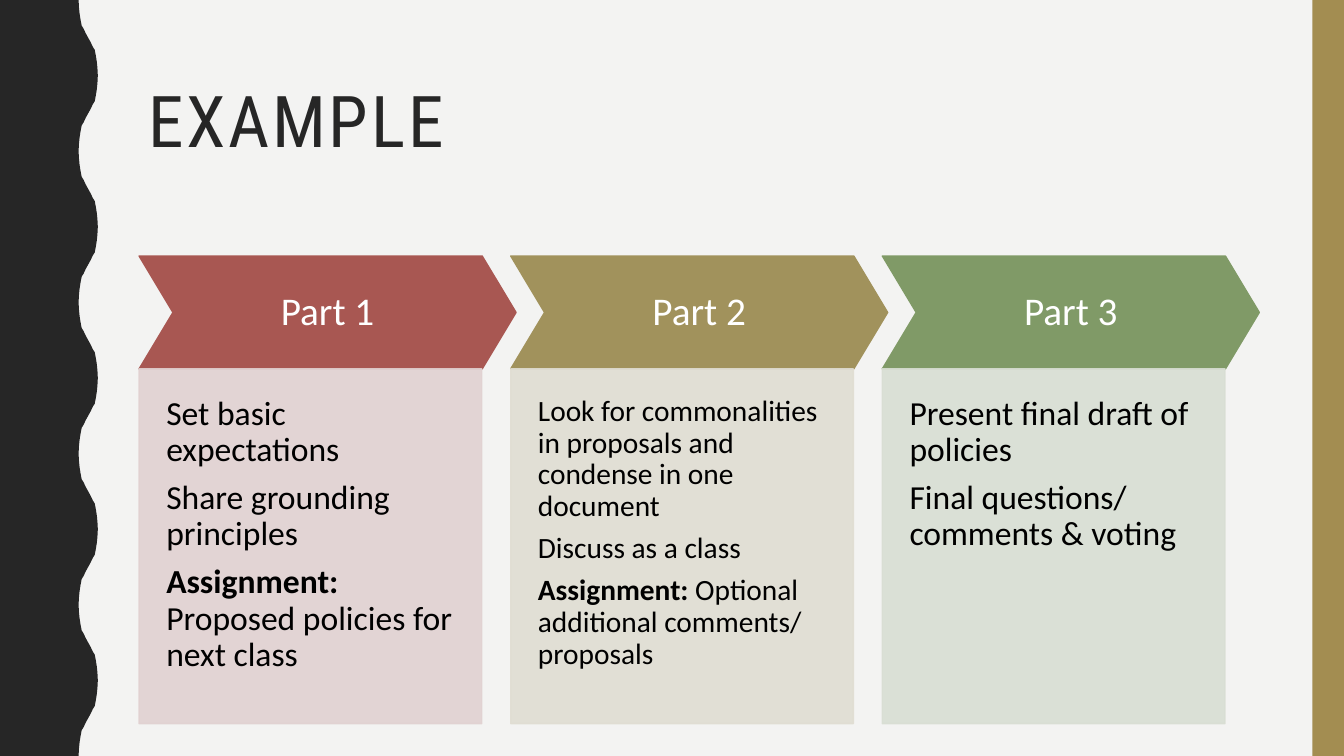
from dataclasses import dataclass

from lxml.etree import SubElement
from pptx import Presentation
from pptx.dml.color import RGBColor
from pptx.enum.shapes import MSO_SHAPE as Preset
from pptx.enum.text import MSO_ANCHOR as Anchor, PP_ALIGN as Align
from pptx.oxml.ns import qn
from pptx.shapes.autoshape import Shape
from pptx.slide import Slide
from pptx.text.text import TextFrame
from pptx.util import Inches, Pt

SLIDE_WIDTH = Inches(13.333)
SLIDE_HEIGHT = Inches(7.5)


@dataclass(frozen=True)
class Theme:
    background: str = "F3F3F2"
    ink: str = "262626"
    accent: str = "A38D51"
    heading_text: str = "FFFFFF"
    body_text: str = "000000"
    title_font: str = "Roboto Condensed"
    body_font: str = "Calibri"
    title_size: int = 51
    title_tracking: int = 2
    heading_size: int = 28
    line_spacing: float = 0.9
    space_after: float = 0.35
    card_opacity: int = 90


@dataclass(frozen=True)
class Area:
    """Shares of the slide in percent."""

    left: float
    top: float
    width: float
    height: float

    def shifted(self, amount: float) -> "Area":
        return Area(self.left + amount, self.top, self.width, self.height)

    def lengths(self) -> tuple[int, int, int, int]:
        return across(self.left), down(self.top), across(self.width), down(self.height)


@dataclass(frozen=True)
class Point:
    text: str
    lead: str = ""


@dataclass(frozen=True)
class Part:
    heading: str
    colour: str
    tint: str
    size: int
    points: tuple[Point, ...]


THEME = Theme()
TITLE = Area(10.28, 5.6, 83.48, 21.73)
RIGHT_BAR = Area(97.65, 0, 2.35, 100)
CHEVRON = Area(10.35, 33.87, 28.05, 14.93)
CARD = Area(10.35, 48.8, 25.5, 46.93)
COLUMN_PITCH = 27.65

WAVE_COUNT = 5
WAVE_LEFT = 5.85
WAVE_DEPTH = 1.43
QUARTER_WAVE = [(0, 0), (0.02, 0.05), (0.05, 0.09), (0.1, 0.13),
                (0.16, 0.17), (0.26, 0.19), (0.37, 0.22)]

PARTS = (
    Part("Part 1", "A85752", "E1D1D1", 24, (
        Point("Set basic expectations"),
        Point("Share grounding principles"),
        Point(" Proposed policies for next class", "Assignment:"),
    )),
    Part("Part 2", "A1925C", "E0DDD2", 21, (
        Point("Look for commonalities in proposals and condense in one document"),
        Point("Discuss as a class"),
        Point(" Optional additional comments/ proposals", "Assignment:"),
    )),
    Part("Part 3", "809A67", "D8DED3", 24, (
        Point("Present final draft of policies"),
        Point("Final questions/ comments & voting"),
    )),
)


def across(percent: float) -> int:
    return round(SLIDE_WIDTH * percent / 100)


def down(percent: float) -> int:
    return round(SLIDE_HEIGHT * percent / 100)


def paint(shape: Shape, colour: str, outlined: bool = False, opacity: int = 100) -> None:
    shape.shadow.inherit = False
    shape.fill.solid()
    shape.fill.fore_color.rgb = RGBColor.from_string(colour)
    if outlined:
        shape.line.width = Pt(1)
        shape.line.color.rgb = RGBColor.from_string(colour)
    else:
        shape.line.fill.background()
    if opacity < 100:
        for tone in shape.element.spPr.iter(qn("a:srgbClr")):
            SubElement(tone, qn("a:alpha"), val=str(opacity * 1000))


def add_block(page: Slide, preset: Preset, area: Area, colour: str,
              outlined: bool = False, opacity: int = 100) -> Shape:
    block = page.shapes.add_shape(preset, *area.lengths())
    paint(block, colour, outlined, opacity)
    return block


def set_frame(frame: TextFrame, anchor: Anchor, inset: float, bottom: float) -> None:
    frame.word_wrap = True
    frame.vertical_anchor = anchor
    frame.margin_left = frame.margin_right = frame.margin_top = Inches(inset)
    frame.margin_bottom = Inches(bottom)


def style_text(frame: TextFrame, font: str, size: int, colour: str,
               align: Align = Align.LEFT, space_after: float = 0) -> None:
    for para in frame.paragraphs:
        para.alignment = align
        para.line_spacing = THEME.line_spacing
        para.space_after = Pt(size * space_after)
        for span in para.runs:
            span.font.name = font
            span.font.size = Pt(size)
            span.font.color.rgb = RGBColor.from_string(colour)


def add_wavy_edge(page: Slide) -> None:
    half = QUARTER_WAVE + [(0.5, 0.25)] + [(1 - x, 0.5 - y) for x, y in reversed(QUARTER_WAVE)]
    wave = half + [(x, 1 - y) for x, y in reversed(half[:-1])]
    period = 100 / WAVE_COUNT
    edge = [(across(WAVE_LEFT + x * WAVE_DEPTH), down((index + y) * period))
            for index in range(WAVE_COUNT) for x, y in wave]
    outline = page.shapes.build_freeform(0, 0)
    outline.add_line_segments(edge + [(0, SLIDE_HEIGHT)], close=True)
    paint(outline.convert_to_shape(), THEME.ink)


def add_title(page: Slide, text: str) -> None:
    box = page.shapes.add_textbox(*TITLE.lengths())
    set_frame(box.text_frame, Anchor.MIDDLE, 0.1, 0.1)
    box.text_frame.text = text
    style_text(box.text_frame, THEME.title_font, THEME.title_size, THEME.ink)
    for span in box.text_frame.paragraphs[0].runs:
        span.font._element.set("spc", str(THEME.title_tracking * 100))


def add_heading(page: Slide, part: Part, shift: float) -> None:
    chevron = add_block(page, Preset.CHEVRON, CHEVRON.shifted(shift), part.colour, outlined=True)
    chevron.adjustments[0] = 0.3
    set_frame(chevron.text_frame, Anchor.MIDDLE, 0.14, 0.14)
    chevron.text_frame.text = part.heading
    style_text(chevron.text_frame, THEME.body_font, THEME.heading_size,
               THEME.heading_text, Align.CENTER)


def add_card(page: Slide, part: Part, shift: float) -> None:
    card = add_block(page, Preset.RECTANGLE, CARD.shifted(shift), part.tint,
                     outlined=True, opacity=THEME.card_opacity)
    frame = card.text_frame
    set_frame(frame, Anchor.TOP, 0.27, 0.54)
    for index, point in enumerate(part.points):
        para = frame.add_paragraph() if index else frame.paragraphs[0]
        para.text = point.lead or point.text
        if point.lead:
            para.runs[0].font.bold = True
            para.add_run().text = point.text
    style_text(frame, THEME.body_font, part.size, THEME.body_text,
               space_after=THEME.space_after)


def main() -> None:
    deck = Presentation()
    deck.slide_width = SLIDE_WIDTH
    deck.slide_height = SLIDE_HEIGHT
    page = deck.slides.add_slide(deck.slide_layouts[6])
    page.background.fill.solid()
    page.background.fill.fore_color.rgb = RGBColor.from_string(THEME.background)
    add_wavy_edge(page)
    add_block(page, Preset.RECTANGLE, RIGHT_BAR, THEME.accent)
    add_title(page, "EXAMPLE")
    for index, part in enumerate(PARTS):
        add_heading(page, part, index * COLUMN_PITCH)
        add_card(page, part, index * COLUMN_PITCH)
    deck.save("out.pptx")


if __name__ == "__main__":
    main()
